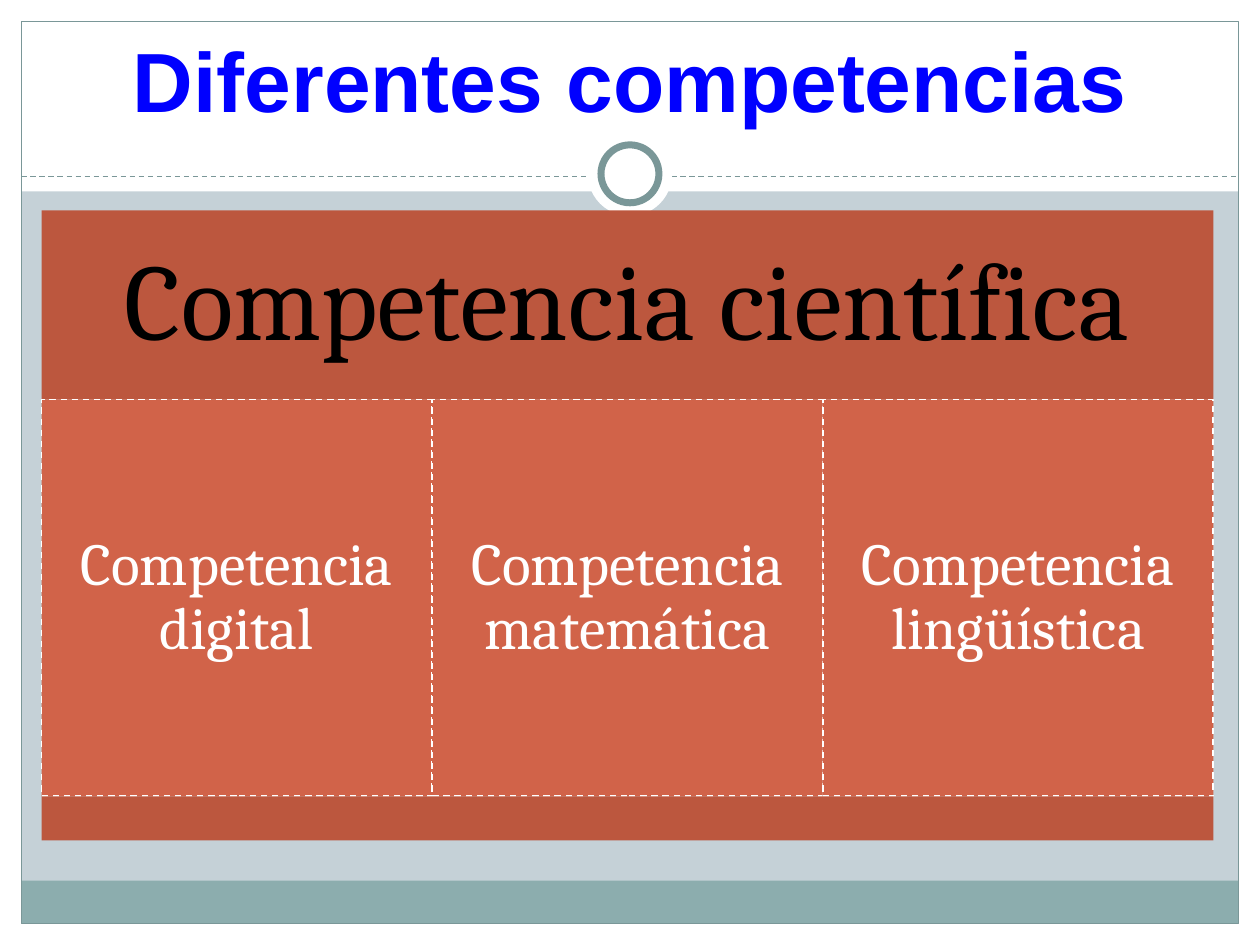
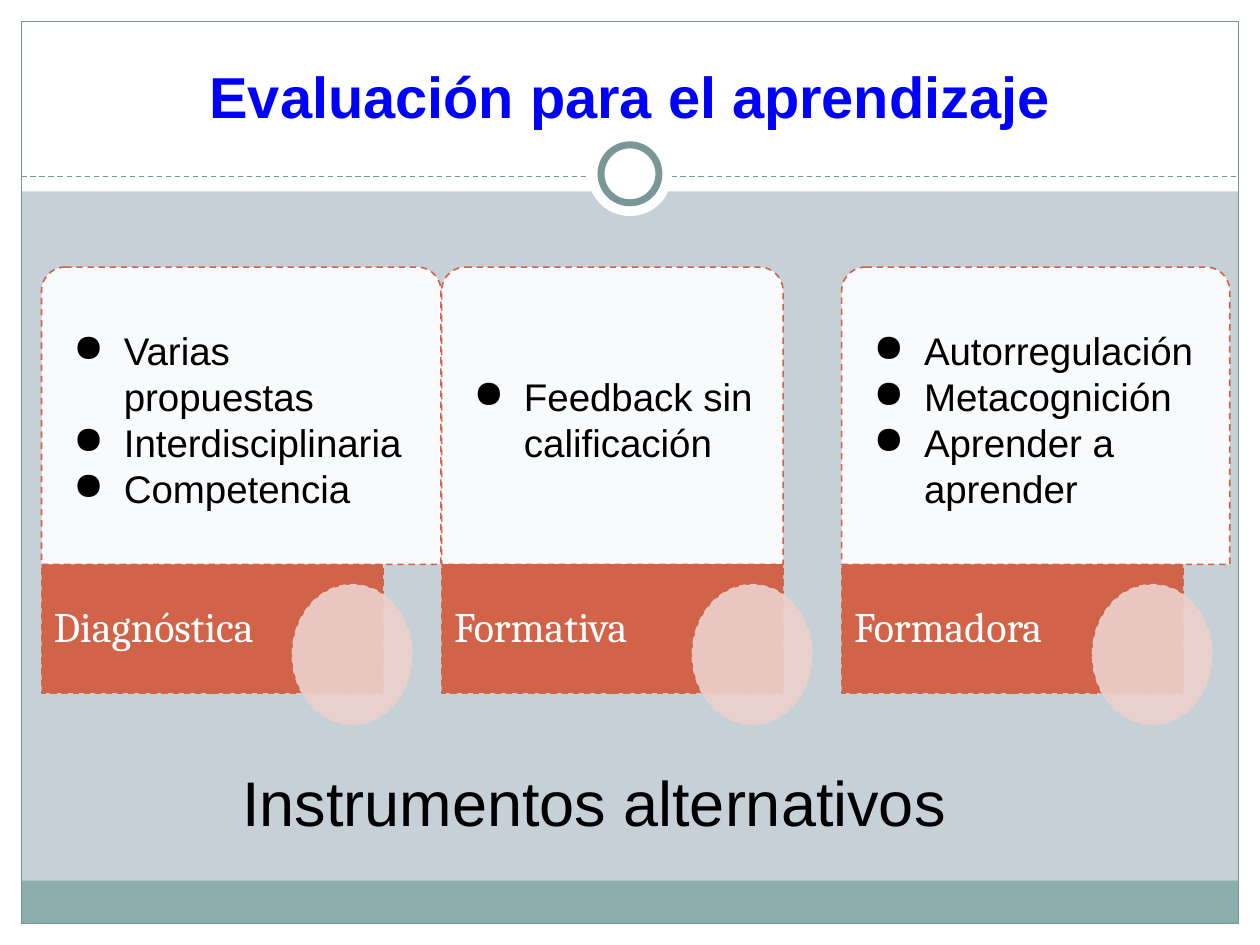
"""Build two slides on school competences and assessment for learning."""
from pptx import Presentation
from pptx.dml.color import RGBColor as RGB
from pptx.enum.dml import MSO_LINE
from pptx.enum.shapes import MSO_CONNECTOR, MSO_SHAPE as SHAPE
from pptx.enum.text import MSO_ANCHOR as ANCHOR, MSO_AUTO_SIZE, PP_ALIGN as ALIGN
from pptx.oxml.ns import qn
from pptx.oxml.xmlchemy import OxmlElement
from pptx.util import Inches, Pt

W, H = 10, 7.5
EDGE = 0.17
LEFT = 0.33
HEADER_H = 1.52
RULE_Y = 1.4
RING_Y = 1.38
FOOTER_H = 0.34

WHITE = RGB(0xFF, 0xFF, 0xFF)
BLACK = RGB(0, 0, 0)
BLUE = RGB(0, 0, 0xFF)
MIST = RGB(0xC5, 0xD1, 0xD7)
TEAL = RGB(0x8C, 0xAD, 0xAE)
SLATE = RGB(0x7A, 0x97, 0x98)
BRICK = RGB(0xD1, 0x63, 0x49)
DARK_BRICK = RGB(0xBC, 0x57, 0x3E)
PINK = RGB(0xEC, 0xD1, 0xCD)
SANS, SERIF = "Arial", "Cambria"

COMPETENCES = {
    "title": "Diferentes competencias",
    "heading": "Competencia científica",
    "parts": ["Competencia digital", "Competencia matemática", "Competencia lingüística"],
}
ASSESSMENT = {
    "title": "Evaluación para el aprendizaje",
    "cards": [
        ("Diagnóstica", 3.17, ["Varias propuestas", "Interdisciplinaria", "Competencia"]),
        ("Formativa", 2.71, ["Feedback sin calificación"]),
        ("Formadora", 3.08, ["Autorregulación", "Metacognición", "Aprender a aprender"]),
    ],
    "closing": "Instrumentos alternativos",
}


def box(x, y, w, h):
    return [Inches(v) for v in (x, y, w, h)]


def write(shape, *lines, size, font=SANS, color=BLACK, bold=False, align=ALIGN.CENTER,
          anchor=ANCHOR.MIDDLE, insets=(0.1, 0.1, 0.1, 0.1), spacing=1.0, bullet=None):
    tf = shape.text_frame
    tf.word_wrap = True
    tf.auto_size = MSO_AUTO_SIZE.NONE
    tf.vertical_anchor = anchor
    tf.margin_left, tf.margin_top, tf.margin_right, tf.margin_bottom = map(Inches, insets)
    for i, line in enumerate(lines):
        p = tf.add_paragraph() if i else tf.paragraphs[0]
        p.alignment, p.line_spacing = align, spacing
        p.space_before = p.space_after = Pt(0)
        r = p.add_run()
        r.text = line
        r.font.name, r.font.size, r.font.bold = font, Pt(size), bold
        r.font.color.rgb = color
        if bullet:
            pPr = p._p.get_or_add_pPr()
            pPr.set("marL", str(Inches(0.5)))
            pPr.set("indent", str(Inches(-0.4)))
            mark = OxmlElement("a:buChar")
            mark.set("char", bullet)
            pPr.append(mark)


def draw(s, kind, x, y, w, h, fill=None, line=None, width=0.9, dash=False, alpha=None):
    sp = s.shapes.add_shape(kind, *box(x, y, w, h))
    sp.shadow.inherit = False
    if fill is None:
        sp.fill.background()
    else:
        sp.fill.solid()
        sp.fill.fore_color.rgb = fill
    if line is None:
        sp.line.fill.background()
    else:
        sp.line.color.rgb = line
        sp.line.width = Pt(width)
        if dash:
            sp.line.dash_style = MSO_LINE.DASH
    if alpha:
        spPr = sp.element.spPr
        paths = ["a:solidFill"] + (["a:ln/a:solidFill"] if line == fill else [])
        for color in (c for path in paths for c in spPr.xpath(path + "/a:srgbClr")):
            node = OxmlElement("a:alpha")
            node.set("val", str(alpha * 1000))
            color.append(node)
    return sp


def draw_frame(s):
    inner_w, inner_h = W - 2 * EDGE, H - 2 * EDGE
    bands = [
        (0, H - EDGE, W, EDGE, WHITE),
        (0, 0, W, HEADER_H, WHITE),
        (0, 0, EDGE, H, WHITE),
        (W - EDGE, 0, EDGE, H, WHITE),
        (EDGE, H - EDGE - FOOTER_H, inner_w, FOOTER_H, TEAL),
    ]
    parts = [draw(s, SHAPE.RECTANGLE, *band) for band in bands]
    parts.append(draw(s, SHAPE.RECTANGLE, EDGE, EDGE, inner_w, inner_h, line=SLATE, width=0.75))
    rule = s.shapes.add_connector(MSO_CONNECTOR.STRAIGHT, *box(EDGE, RULE_Y, W - EDGE, RULE_Y))
    rule.line.color.rgb = SLATE
    rule.line.width = Pt(0.75)
    rule.line.dash_style = MSO_LINE.DASH
    rule.element.spPr.append(OxmlElement("a:effectLst"))
    parts.append(rule)
    for d, line in ((0.67, None), (0.46, SLATE)):
        parts.append(draw(s, SHAPE.OVAL, (W - d) / 2, RING_Y - d / 2, d, d, WHITE, line, 4))
    return parts


def prepare_layout(prs, layout):
    """Move the shared frame behind the layout's title."""
    layout.background.fill.solid()
    layout.background.fill.fore_color.rgb = MIST
    title, *others = layout.placeholders
    for ph in others:
        ph.element.getparent().remove(ph.element)
    s = prs.slides.add_slide(layout)
    for part in draw_frame(s):
        title.element.addprevious(part.element)
    return s


def set_title(s, text, size):
    title = s.shapes.title
    title.left, title.top, title.width, title.height = box(LEFT, 0.25, W - 2 * LEFT, 0.83)
    write(title, text, size=size, color=BLUE, bold=True, anchor=ANCHOR.BOTTOM,
          insets=(0.1, 0.05, 0.1, 0.05))


def fill_competences(s, heading, parts, title):
    set_title(s, title, 48)
    panel_w, top, head_h, part_h, foot_h = 9.3, 1.67, 1.5, 3.15, 0.35
    head = draw(s, SHAPE.RECTANGLE, LEFT, top, panel_w, head_h, DARK_BRICK)
    write(head, heading, size=62, font=SERIF, insets=(0.26,) * 4, spacing=0.9)
    part_w = panel_w / len(parts)
    for i, text in enumerate(parts):
        part = draw(s, SHAPE.RECTANGLE, LEFT + i * part_w, top + head_h, part_w, part_h,
                    BRICK, WHITE, dash=True)
        write(part, text, size=34, font=SERIF, color=WHITE, insets=(0.14,) * 4, spacing=0.9)
    draw(s, SHAPE.RECTANGLE, LEFT, top + head_h + part_h, panel_w, foot_h, DARK_BRICK)


def fill_assessment(s, cards, closing, title):
    set_title(s, title, 33)
    pitch, top, card_h, label_w, label_h = 6.35 / 2, 2.12, 2.36, 2.71, 1.02
    label_y = top + card_h
    for i, (name, card_w, points) in enumerate(cards):
        x = LEFT + i * pitch
        card = draw(s, SHAPE.ROUND_2_SAME_RECTANGLE, x, top, card_w, card_h,
                    WHITE, BRICK, dash=True, alpha=90)
        card.adjustments[0], card.adjustments[1] = 0.08, 0
        write(card, *points, size=22, align=ALIGN.LEFT, bullet="●")
        label = draw(s, SHAPE.RECTANGLE, x, label_y, label_w, label_h, BRICK, BRICK, dash=True)
        write(label, name, size=24, font=SERIF, color=WHITE, align=ALIGN.LEFT,
              insets=(0.1, 0, 0.83, 0), spacing=0.9)
        draw(s, SHAPE.OVAL, x + 1.99, label_y + 0.16, 0.95, 1.11, PINK, PINK, dash=True, alpha=90)
    note = s.shapes.add_textbox(*box(0.66, 5.96, 8.11, 0.83))
    write(note, closing, size=36, anchor=ANCHOR.TOP)


def main():
    prs = Presentation()
    prs.slide_width, prs.slide_height = Inches(W), Inches(H)
    layout = prs.slide_layouts[5]
    fill_competences(prepare_layout(prs, layout), **COMPETENCES)
    fill_assessment(prs.slides.add_slide(layout), **ASSESSMENT)
    prs.save("out.pptx")


if __name__ == "__main__":
    main()
